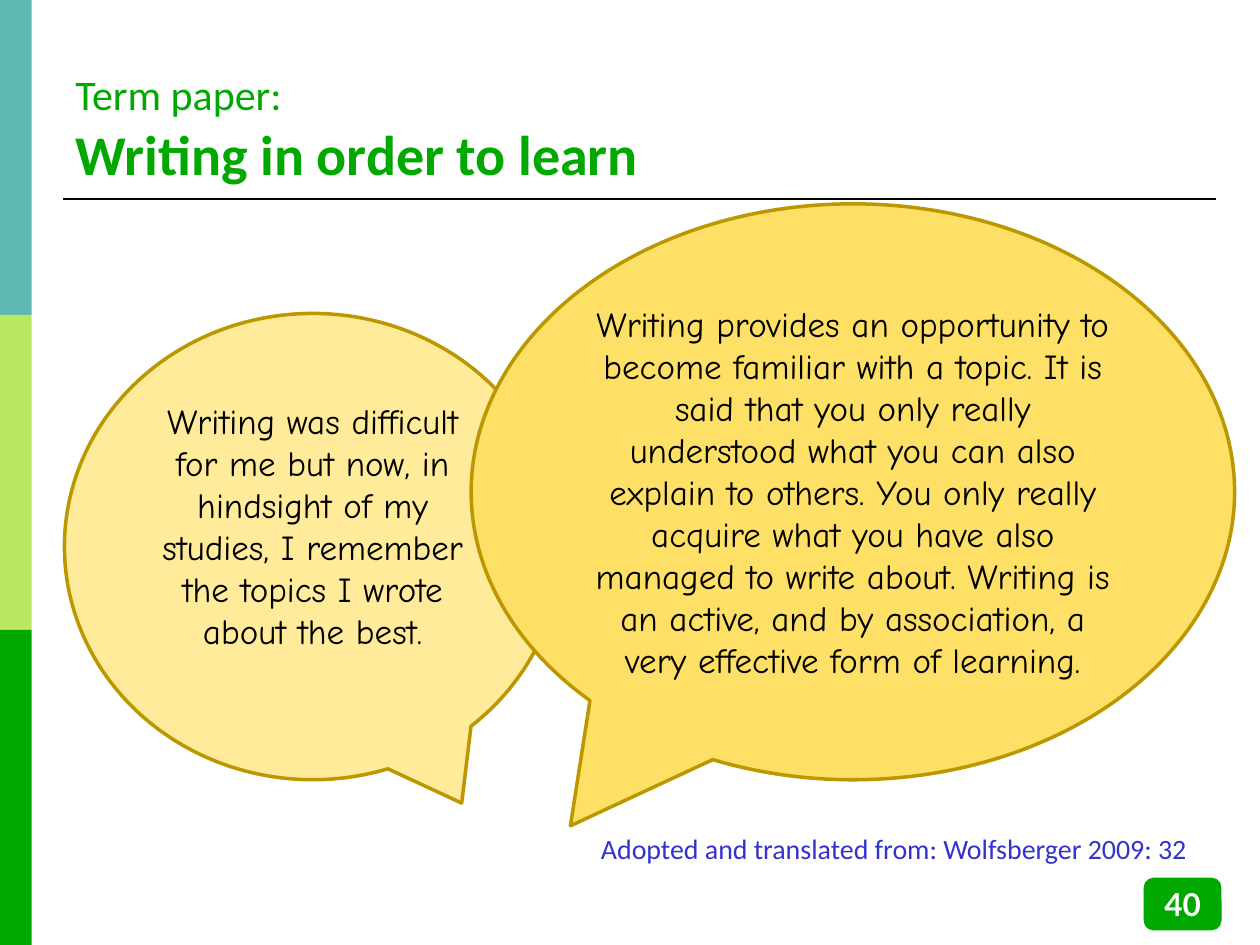
from lxml import etree
from pptx import Presentation
from pptx.dml.color import RGBColor
from pptx.enum.shapes import MSO_CONNECTOR, MSO_SHAPE
from pptx.enum.text import MSO_ANCHOR, PP_ALIGN
from pptx.oxml.ns import qn
from pptx.util import Cm, Pt

RECT = MSO_SHAPE.RECTANGLE
ROUNDED = MSO_SHAPE.ROUNDED_RECTANGLE
BUBBLE = MSO_SHAPE.OVAL_CALLOUT
STRAIGHT = MSO_CONNECTOR.STRAIGHT
TOP, MIDDLE, BOTTOM = MSO_ANCHOR.TOP, MSO_ANCHOR.MIDDLE, MSO_ANCHOR.BOTTOM
LEFT, CENTER, RIGHT = PP_ALIGN.LEFT, PP_ALIGN.CENTER, PP_ALIGN.RIGHT

GREEN = "00A800"
GOLD = "BD9700"
BLACK = "000000"
BAND_COLORS = ("5FB8B2", "BAE860", GREEN)

LEFT_QUOTE = (
    "Writing was difficult for me but now, in hindsight of my studies, "
    "I remember the topics I wrote about the best."
)
RIGHT_QUOTE = (
    "Writing provides an opportunity to become familiar with a topic. "
    "It is said that you only really understood what you can also explain "
    "to others. You only really acquire what you have also managed to write "
    "about. Writing is an active, and by association, a very effective form "
    "of learning."
)


def rgb(color):
    return RGBColor.from_string(color)


def add_run(p, text, font="Calibri", size=16, color=BLACK, bold=False):
    r = p.add_run()
    r.text = text
    r.font.name = font
    r.font.size = Pt(size)
    r.font.bold = bold
    r.font.color.rgb = rgb(color)


def set_frame(sp, anchor=TOP, align=LEFT, insets=(0.25, 0.13, 0.25, 0.13)):
    """Format the text frame (insets: left, top, right, bottom in cm); return its paragraph."""
    tf = sp.text_frame
    tf.word_wrap = True
    tf.vertical_anchor = anchor
    tf.margin_left, tf.margin_top, tf.margin_right, tf.margin_bottom = map(Cm, insets)
    p = tf.paragraphs[0]
    p.alignment = align
    return p


def add_box(slide, kind, box, fill, line=None, adjustments=()):
    sp = slide.shapes.add_shape(kind, *map(Cm, box))
    sp.shadow.inherit = False
    sp.fill.solid()
    sp.fill.fore_color.rgb = rgb(fill)
    if line:
        sp.line.color.rgb = rgb(line)
        sp.line.width = Pt(2)
    else:
        sp.line.fill.background()
    for i, value in enumerate(adjustments):
        sp.adjustments[i] = value
    return sp


def add_bubble(slide, box, fill, tail, text, bottom_inset=0.13):
    sp = add_box(slide, BUBBLE, box, fill, GOLD, tail)
    p = set_frame(sp, MIDDLE, CENTER, (0.25, 0.13, 0.25, bottom_inset))
    add_run(p, text, font="Comic Neue", size=20)


def add_rule(slide, x1, x2, y):
    line = slide.shapes.add_connector(STRAIGHT, Cm(x1), Cm(y), Cm(x2), Cm(y))
    line.line.color.rgb = rgb(BLACK)
    line.line.width = Pt(1.5)
    etree.SubElement(line._element.spPr, qn("a:effectLst"))


def add_title(slide, topic, headline):
    sp = slide.shapes.add_textbox(Cm(1.27), Cm(0.71), Cm(23.24), Cm(3.18))
    p = set_frame(sp, BOTTOM)
    add_run(p, topic, size=24, color=GREEN)
    p.add_line_break()
    add_run(p, headline, size=32, color=GREEN, bold=True)


def add_source(slide, text):
    sp = slide.shapes.add_textbox(Cm(6.32), Cm(16.64), Cm(18.01), Cm(0.94))
    p = set_frame(sp, align=RIGHT, insets=(0.25, 0.13, 0.4, 0.13))
    add_run(p, text, color="3333CC")


def add_page_number(slide, number):
    sp = add_box(slide, ROUNDED, (23.09, 17.73, 1.5, 0.99), GREEN, GREEN)
    p = set_frame(sp, MIDDLE, CENTER, (0, 0, 0, 0))
    add_run(p, number, font="Lato", size=18, color="FFFFFF", bold=True)


def main():
    prs = Presentation()
    prs.slide_width, prs.slide_height = Cm(25.4), Cm(19.05)
    slide = prs.slides.add_slide(prs.slide_layouts[6])

    band_height = 19.05 / len(BAND_COLORS)
    for i, color in enumerate(BAND_COLORS):
        add_box(slide, RECT, (0, i * band_height, 0.64, band_height), color)
    add_rule(slide, 1.27, 24.51, 4.01)
    add_title(slide, "Term paper:", "Writing in order to learn")

    add_bubble(slide, (1.3, 6.32, 10.01, 9.4), "FFEB99", (0.3, 0.55),
               LEFT_QUOTE, bottom_inset=0.98)
    add_bubble(slide, (9.5, 4.11, 15.39, 11.61), "FFE066", (-0.37, 0.58), RIGHT_QUOTE)

    add_source(slide, "Adopted and translated from: Wolfsberger 2009: 32")
    add_page_number(slide, "40")
    prs.save("out.pptx")


if __name__ == "__main__":
    main()
